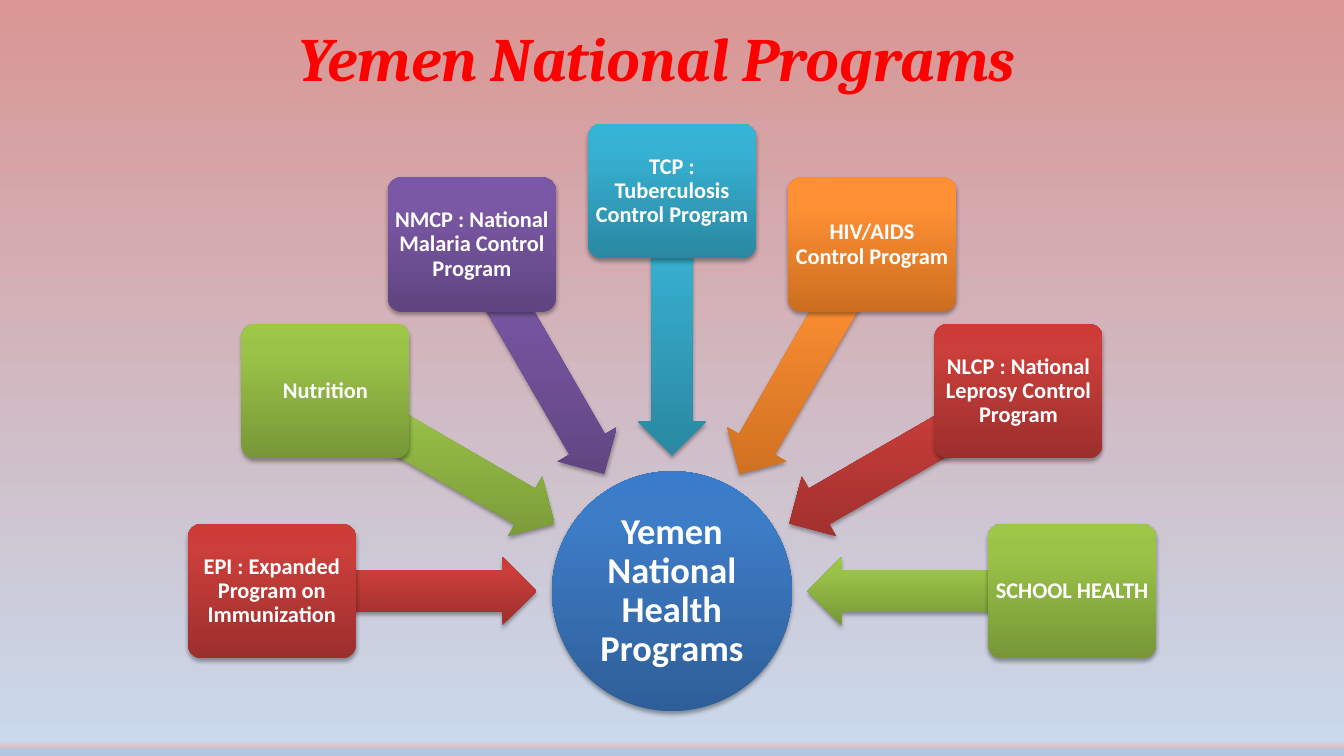
from dataclasses import dataclass
from math import cos, radians, sin

from pptx import Presentation
from pptx.dml.color import RGBColor
from pptx.enum.shapes import MSO_SHAPE as Shape
from pptx.enum.text import MSO_ANCHOR as Anchor, PP_ALIGN as Align
from pptx.oxml import parse_xml
from pptx.oxml.ns import nsdecls, qn
from pptx.util import Pt


@dataclass(frozen=True)
class Theme:
    background = ((0, "D99694"), (98, "CAD9EB"), (99, "E6B9B8"), (99, "B0C6E1"))
    blue = ((0, "2F5F99"), (80, "3D7CC7"), (100, "3A7CCB"))
    red = ((0, "9C2F2D"), (80, "CB3E3A"), (100, "CE3B37"))
    green = ((0, "779737"), (80, "9BC348"), (100, "9DC746"))
    purple = ((0, "5F4480"), (80, "7B58A6"), (100, "7C57A8"))
    teal = ((0, "2A88A2"), (80, "37B1D2"), (100, "34B4D6"))
    orange = ((0, "CC6E20"), (80, "FF9034"), (100, "FF9136"))
    title_color = "FF0000"
    label_color = "FFFFFF"
    title_font = "Cambria"
    label_font = "Calibri"
    title_size = 44
    hub_size = 26
    label_size = 16


THEME = Theme()

PROGRAMS = (
    ("EPI : Expanded Program on Immunization", THEME.red),
    ("Nutrition", THEME.green),
    ("NMCP : National Malaria Control Program", THEME.purple),
    ("TCP : Tuberculosis Control Program", THEME.teal),
    ("HIV/AIDS Control Program", THEME.orange),
    ("NLCP : National Leprosy Control Program", THEME.red),
    ("SCHOOL HEALTH", THEME.green),
)


def set_format(target, values):
    for name, value in values.items():
        setattr(target, name, value)


def set_gradient(element, fill, stops, angle):
    fill.gradient()
    gradient = element.find(".//" + qn("a:gradFill"))
    stop_xml = "".join(
        f'<a:gs pos="{position * 1000}"><a:srgbClr val="{color}"/></a:gs>'
        for position, color in stops
    )
    gradient.getparent().replace(gradient, parse_xml(
        f'<a:gradFill {nsdecls("a")} rotWithShape="0"><a:gsLst>{stop_xml}</a:gsLst>'
        f'<a:lin ang="{angle * 60000}" scaled="0"/></a:gradFill>'
    ))


def add_shadow(shape):
    shape.shadow.inherit = False
    effects = shape._element.spPr.find(qn("a:effectLst"))
    effects.append(parse_xml(
        f'<a:outerShdw {nsdecls("a")} blurRad="{Pt(3.1)}" dist="{Pt(1.8)}" '
        'dir="5400000" rotWithShape="0"><a:srgbClr val="000000">'
        '<a:alpha val="35000"/></a:srgbClr></a:outerShdw>'
    ))


def write_text(shape, text, inset, font_values, color, line_spacing):
    frame = shape.text_frame
    set_format(frame, {
        "word_wrap": True,
        "vertical_anchor": Anchor.MIDDLE,
        "margin_left": Pt(inset),
        "margin_right": Pt(inset),
        "margin_top": Pt(inset),
        "margin_bottom": Pt(inset),
    })
    paragraph = frame.paragraphs[0]
    set_format(paragraph, {"alignment": Align.CENTER, "line_spacing": line_spacing})
    run = paragraph.add_run()
    run.text = text
    set_format(run.font, {"bold": True, **font_values})
    run.font.color.rgb = RGBColor.from_string(color)


def add_centered(slide, kind, center_x, center_y, width, height, stops):
    shape = slide.shapes.add_shape(
        kind, Pt(center_x - width / 2), Pt(center_y - height / 2), Pt(width), Pt(height)
    )
    set_gradient(shape._element, shape.fill, stops, 270)
    shape.line.fill.background()
    add_shadow(shape)
    return shape


def write_label(shape, text, size):
    font_values = {"name": THEME.label_font, "size": Pt(size)}
    write_text(shape, text, 2, font_values, THEME.label_color, 0.9)


def add_title(slide, left, top, width, height):
    title = slide.shapes.add_textbox(Pt(left), Pt(top), Pt(width), Pt(height))
    font_values = {"name": THEME.title_font, "size": Pt(THEME.title_size), "italic": True}
    write_text(title, "Yemen National Programs", 4, font_values, THEME.title_color, 1.0)


def add_spoke(slide, center_x, center_y, radius, angle, text, stops):
    across, down = cos(radians(angle)), sin(radians(angle))
    reach = radius * 0.67
    arrow = add_centered(
        slide, Shape.LEFT_ARROW, center_x + reach * across, center_y + reach * down,
        189.4, 48.9, stops,
    )
    arrow.rotation = angle % 360
    arrow.adjustments[0] = 0.6
    arrow.adjustments[1] = 0.5
    box = add_centered(
        slide, Shape.ROUNDED_RECTANGLE, center_x + radius * across,
        center_y + radius * down, 120, 96, stops,
    )
    box.adjustments[0] = 0.1
    write_label(box, text, THEME.label_size)


def add_radial_diagram(slide, left, top, width, height):
    center_x = left + width / 2
    hub_diameter = 171.4
    center_y = top + height - hub_diameter / 2
    radius = (width - 120) / 2
    hub = add_centered(
        slide, Shape.OVAL, center_x, center_y, hub_diameter, hub_diameter, THEME.blue
    )
    write_label(hub, "Yemen National Health Programs", THEME.hub_size)
    step = 180 / (len(PROGRAMS) - 1)
    for index, (text, stops) in enumerate(PROGRAMS):
        add_spoke(slide, center_x, center_y, radius, 180 + step * index, text, stops)


def main():
    presentation = Presentation()
    set_format(presentation, {"slide_width": Pt(960), "slide_height": Pt(540)})
    slide = presentation.slides.add_slide(presentation.slide_layouts[6])
    set_gradient(slide._element, slide.background.fill, THEME.background, 90)
    add_title(slide, 37.4, 9.4, 864, 62)
    add_radial_diagram(slide, 134.2, 88.6, 691.6, 419.4)
    presentation.save("out.pptx")


if __name__ == "__main__":
    main()
